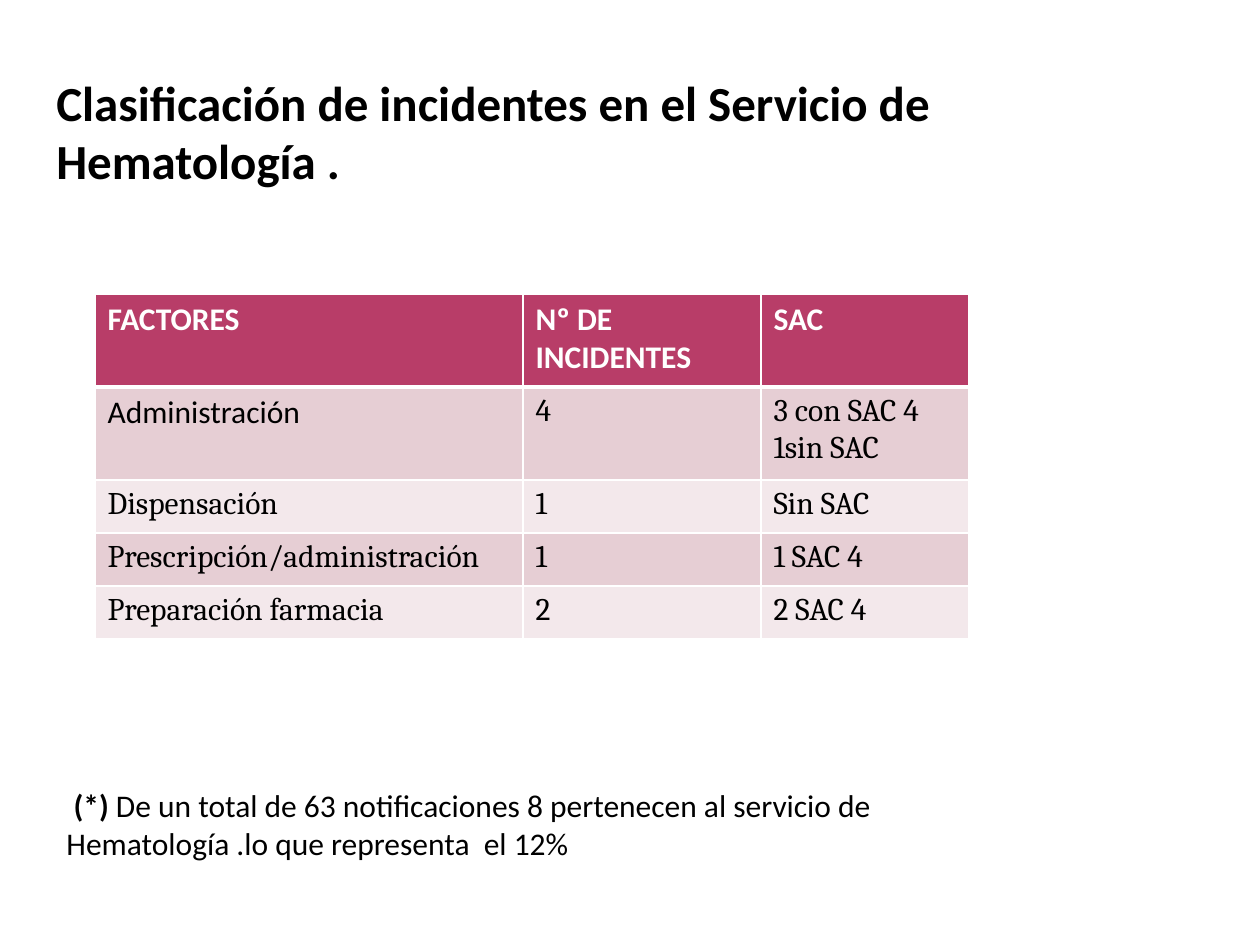
import pptx
import pptx.dml.color
import pptx.oxml.ns
import pptx.util
from lxml import etree

PX = 914400 // 126
COLORS = {
    "black": "000000",
    "white": "FFFFFF",
    "header": "B83D68",
    "odd": "E6CED4",
    "even": "F3E8EB",
}

TITLE = [("Clasificación de incidentes en el Servicio de Hematología .", True)]
NOTE = [
    (" ", False),
    ("(*)", True),
    (" De un total de 63 notificaciones 8 pertenecen al servicio de "
     "Hematología .lo que representa  el 12%", False),
]
INCIDENTS = [
    ("FACTORES", "Nº DE INCIDENTES", "SAC"),
    ("Administración", "4", "3 con SAC 4\n1sin SAC"),
    ("Dispensación", "1", "Sin SAC"),
    ("Prescripción/administración", "1", "1 SAC 4"),
    ("Preparación farmacia", "2", "2 SAC 4"),
]
CALIBRI_CELLS = {"Administración", *INCIDENTS[0]}

TITLE_BOX = (44, 66, 1126, 369)
NOTE_BOX = (54, 780, 843, 127)
TABLE_ORIGIN = (95, 294)
COLUMN_WIDTHS = (428, 238, 208)
ROW_HEIGHTS = (93, 93, 53, 53, 53)


def px(*lengths):
    return [length * PX for length in lengths]


def rgb(name):
    return pptx.dml.color.RGBColor.from_string(COLORS[name])


def style_font(font, size, face, color):
    font.size = pptx.util.Pt(size)
    font.name = face
    font.color.rgb = rgb(color)


def add_text(slide, box, runs, size):
    frame = slide.shapes.add_textbox(*px(*box)).text_frame
    frame.word_wrap = True
    paragraph = frame.paragraphs[0]
    style_font(paragraph.font, size, "Calibri", "black")
    for text, bold in runs:
        run = paragraph.add_run()
        run.text = text
        run.font.bold = bold


def set_borders(cell, widths):
    """Draw white cell edges; widths maps an edge letter (L, R, T, B) to points."""
    properties = cell._tc.get_or_add_tcPr()
    qn = pptx.oxml.ns.qn
    for position, (edge, width) in enumerate(widths.items()):
        line = etree.Element(qn(f"a:ln{edge}"), w=str(pptx.util.Pt(width)))
        fill = etree.SubElement(line, qn("a:solidFill"))
        etree.SubElement(fill, qn("a:srgbClr"), val=COLORS["white"])
        properties.insert(position, line)


def add_incident_table(slide):
    size = (sum(COLUMN_WIDTHS), sum(ROW_HEIGHTS))
    table = slide.shapes.add_table(
        len(INCIDENTS), len(COLUMN_WIDTHS), *px(*TABLE_ORIGIN, *size)).table
    for column, width in zip(table.columns, px(*COLUMN_WIDTHS)):
        column.width = width
    for row, height in zip(table.rows, px(*ROW_HEIGHTS)):
        row.height = height

    for r, values in enumerate(INCIDENTS):
        is_header = r == 0
        fill = "header" if is_header else "odd" if r % 2 else "even"
        edges = {"L": 1, "R": 1, "T": 3 if r == 1 else 1, "B": 3 if is_header else 1}
        for c, text in enumerate(values):
            cell = table.cell(r, c)
            cell.text = text
            cell.fill.solid()
            cell.fill.fore_color.rgb = rgb(fill)
            set_borders(cell, edges)
            face = "Calibri" if text in CALIBRI_CELLS else "Cambria"
            for paragraph in cell.text_frame.paragraphs:
                style_font(paragraph.font, 18, face, "white" if is_header else "black")
                paragraph.font.bold = is_header


def main():
    deck = pptx.Presentation()
    deck.slide_width = pptx.util.Inches(10)
    deck.slide_height = pptx.util.Inches(7.5)
    slide = deck.slides.add_slide(deck.slide_layouts[6])
    add_incident_table(slide)
    add_text(slide, NOTE_BOX, NOTE, 18)
    add_text(slide, TITLE_BOX, TITLE, 28)
    deck.save("out.pptx")


if __name__ == "__main__":
    main()
